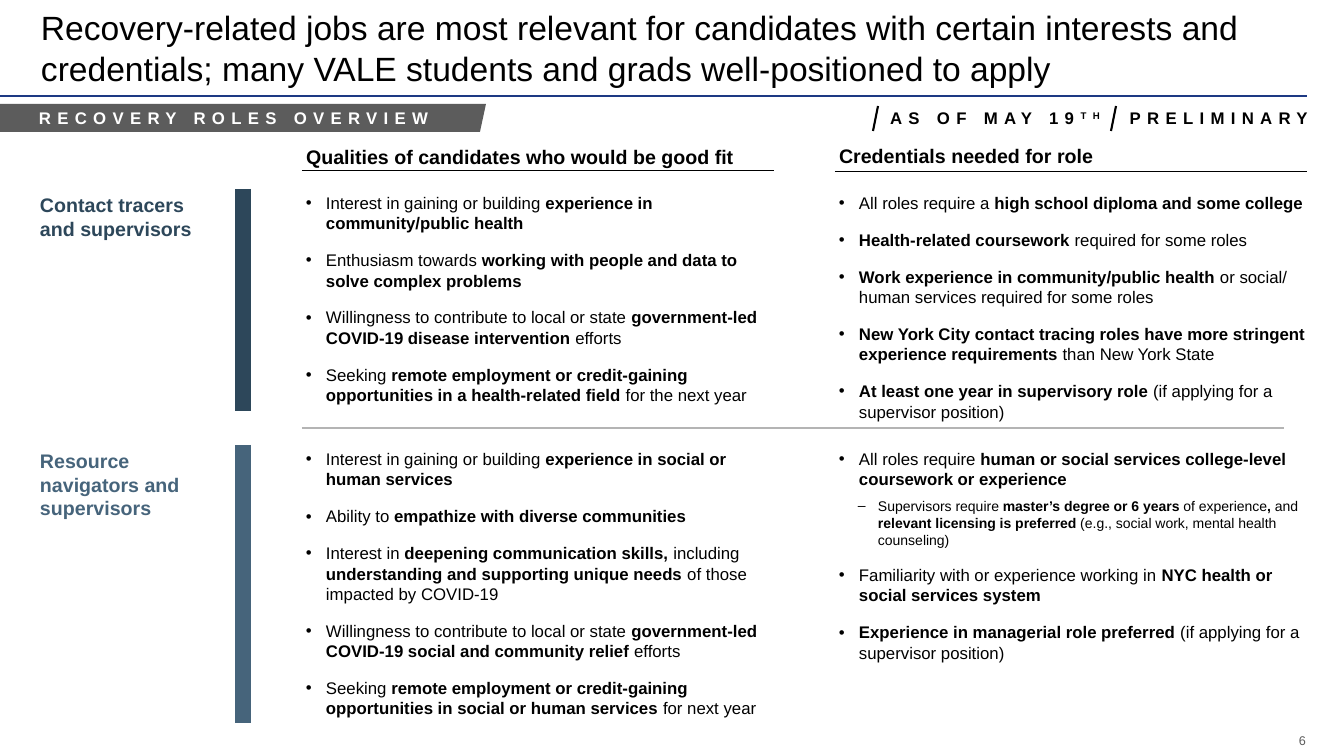
from lxml import etree
from pptx import Presentation
from pptx import util as u
from pptx.dml.color import RGBColor
from pptx.enum import shapes, text
from pptx.oxml.ns import qn

PX = 9071  # EMU per pixel, 100.8 px to the inch
BLACK, GREY, WHITE = "000000", "5C5C5C", "FFFFFF"
color = RGBColor.from_string

presentation = Presentation()
presentation.slide_width, presentation.slide_height = 1344 * PX, 756 * PX
slide = presentation.slides.add_slide(presentation.slide_layouts[6])


def add_text(box, paragraphs, size=12, fill=BLACK, bold=False, insets=(4, 4, 4, 4), align="LEFT",
             anchor="TOP", wrap=True, tracking=0, bullets=False):
    """Text box; ** toggles bold, ^ starts a superscript, a leading "– " marks a sub-bullet."""
    frame = slide.shapes.add_textbox(*(n * PX for n in box)).text_frame
    frame.word_wrap = wrap
    frame.vertical_anchor = getattr(text.MSO_ANCHOR, anchor)
    frame.margin_left, frame.margin_top, frame.margin_right, frame.margin_bottom = (
        n * PX for n in insets)
    for index, content in enumerate(paragraphs):
        paragraph = frame.paragraphs[0] if index == 0 else frame.add_paragraph()
        paragraph.alignment = getattr(text.PP_ALIGN, align)
        run_size = size
        if bullets:
            sub = content.startswith("– ")
            content = content.removeprefix("– ")
            run_size = 10 if sub else size
            paragraph.level = int(sub)
            paragraph.space_before = u.Pt(6 if sub else 12)
            properties = paragraph._p.get_or_add_pPr()
            properties.set("marL", str((39 if sub else 20) * PX))
            properties.set("indent", str(-20 * PX))
            etree.SubElement(properties, qn("a:buFont"), typeface="Arial")
            etree.SubElement(properties, qn("a:buChar"), char="–" if sub else "•")
        for toggle, chunk in enumerate(content.split("**")):
            for raised, part in enumerate(chunk.split("^")):
                if not part:
                    continue
                run = paragraph.add_run()
                run.text = part
                run.font.name, run.font.size = "Arial", u.Pt(run_size)
                run.font.bold = bold or toggle % 2 == 1
                run.font.color.rgb = color(fill)
                if tracking:
                    run._r.get_or_add_rPr().set("spc", str(tracking))
                if raised:
                    run._r.get_or_add_rPr().set("baseline", "30000")


def add_line(x1, y1, x2, y2, stroke=BLACK, width=0.75):
    line = slide.shapes.add_connector(shapes.MSO_CONNECTOR.STRAIGHT,
                                      x1 * PX, y1 * PX, x2 * PX, y2 * PX)
    line.line.color.rgb = color(stroke)
    line.line.width = u.Pt(width)
    etree.SubElement(line._element.spPr, qn("a:effectLst"))


# Title and page number
add_text((37, 0, 1270, 96),
         ["Recovery-related jobs are most relevant for candidates with certain interests and "
          "credentials; many VALE students and grads well-positioned to apply"],
         size=24, insets=(4, 4, 4, 8), anchor="BOTTOM")
add_line(0, 96, 1307, 96, "1D3983", 1.5)
add_text((1291, 733, 15, 15), ["6"], size=9, fill=GREY, insets=(0, 0, 0, 0),
         align="RIGHT", anchor="MIDDLE", wrap=False)

# Section banner
builder = slide.shapes.build_freeform(486, 104, scale=PX)
builder.add_line_segments([(480, 132), (0, 132), (0, 104)], close=True)
banner = builder.convert_to_shape()
banner.shadow.inherit = False
banner.fill.solid()
banner.fill.fore_color.rgb = color(GREY)
banner.line.fill.background()
add_text((0, 104, 491, 28), ["RECOVERY ROLES OVERVIEW"], fill=WHITE, bold=True,
         insets=(39, 4, 39, 4), wrap=False, tracking=450)

# Status stickers
for left, width, sticker in [(876, 224, "AS OF MAY 19^TH"), (1114, 194, "PRELIMINARY")]:
    add_text((left, 105, width, 26), [sticker], bold=True, insets=(8, 3, 0, 3),
             align="RIGHT", wrap=False, tracking=450)
    add_line(left + 2, 106, left - 3, 131, width=1.5)

# Column headings
QUALITIES_X, CREDENTIALS_X, COLUMN_WIDTH = 302, 835, 472
BODY_WIDTH = COLUMN_WIDTH + 4
for left, top, rule_y, heading in [
    (QUALITIES_X, 141, 171, "Qualities of candidates who would be good fit"),
    (CREDENTIALS_X, 140, 172, "Credentials needed for role"),
]:
    add_text((left, top, COLUMN_WIDTH, 31), [heading], size=14, bold=True, anchor="BOTTOM")
    add_line(left, rule_y, left + COLUMN_WIDTH, rule_y)

# Role rows: top, height, colour, label, qualities, credentials
roles = [
    (189, 222, "2D475A", "Contact tracers and supervisors", [
        "Interest in gaining or building **experience in community/public health**",
        "Enthusiasm towards **working with people and data to solve complex problems**",
        "Willingness to contribute to local or state **government-led COVID-19 disease "
        "intervention **efforts",
        "Seeking **remote employment or credit-gaining opportunities in a health-related "
        "field **for the next year",
    ], [
        "All roles require a **high school diploma and some college**",
        "**Health-related coursework **required for some roles",
        "**Work experience in community/public health **or social/ human services required "
        "for some roles",
        "**New York City contact tracing roles have more stringent experience requirements** "
        "than New York State",
        "**At least one year in supervisory role** (if applying for a supervisor position)",
    ]),
    (445, 278, "46647B", "Resource navigators and supervisors", [
        "Interest in gaining or building **experience in social or human services**",
        "Ability to **empathize with diverse communities**",
        "Interest in **deepening communication skills, **including** understanding and "
        "supporting unique needs **of those impacted by COVID-19",
        "Willingness to contribute to local or state **government-led COVID-19 social and "
        "community relief **efforts",
        "Seeking **remote employment or credit-gaining opportunities in social or human "
        "services **for next year",
    ], [
        "All roles require **human or social services college-level coursework or experience**",
        "– Supervisors require **master’s degree or 6 years **of experience**,** and "
        "**relevant licensing is preferred** (e.g., social work, mental health counseling)",
        "Familiarity with or experience working in **NYC health or social services system**",
        "**Experience in managerial role preferred **(if applying for a supervisor position)",
    ]),
]
for top, height, shade, label, qualities, credentials in roles:
    add_text((36, top, 207, height), [label], size=14, fill=shade, bold=True,
             insets=(4, 4, 20, 4))
    add_line(243, top, 243, top + height, shade, 12)
    for left, items in [(QUALITIES_X, qualities), (CREDENTIALS_X, credentials)]:
        add_text((left, top, BODY_WIDTH, height), items, bullets=True)
add_line(QUALITIES_X, 428, 1284, 428, "B4B4B4")

presentation.save("out.pptx")
